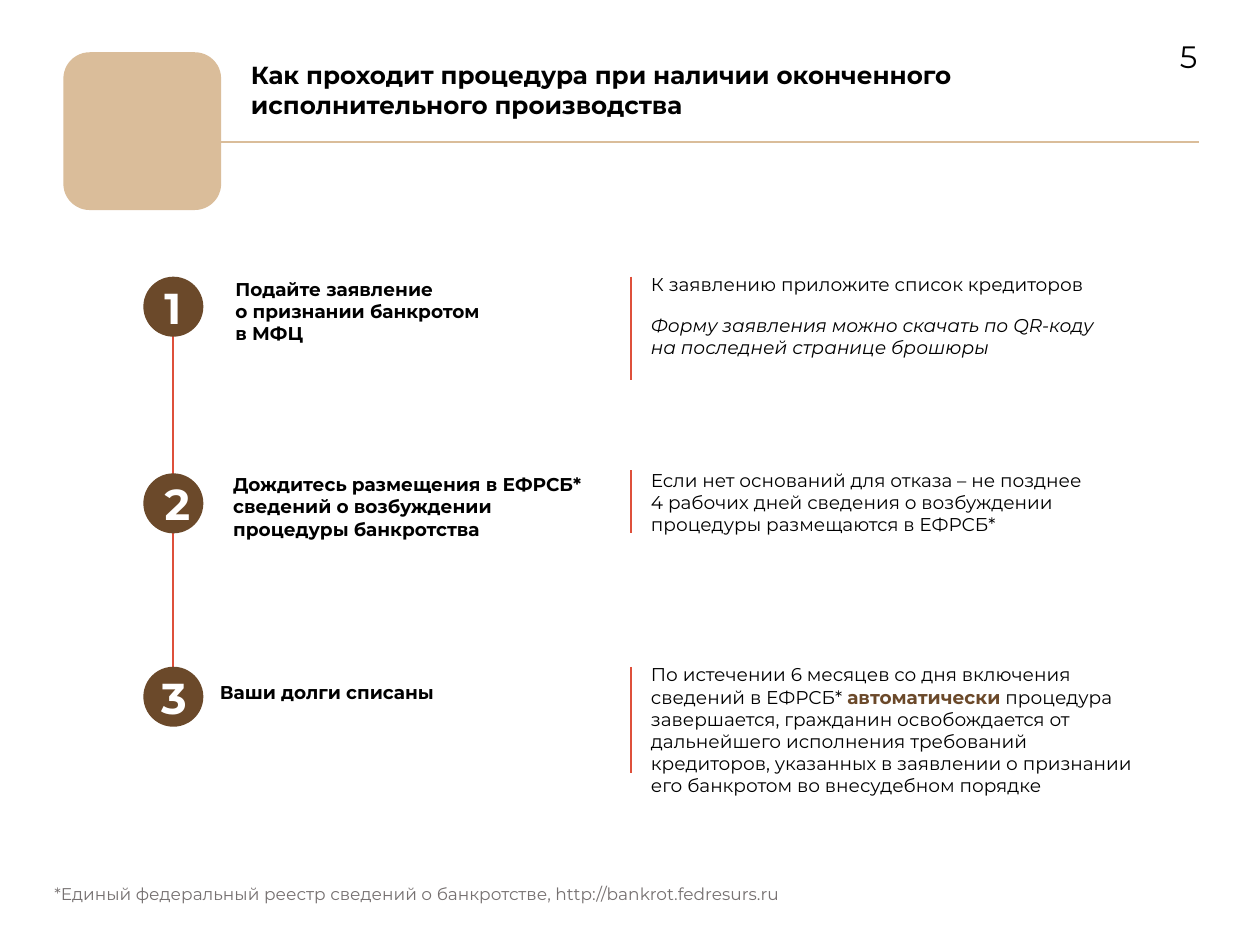
from lxml.etree import SubElement
from pptx import Presentation
from pptx.dml.color import RGBColor
from pptx.enum.shapes import MSO_CONNECTOR, MSO_SHAPE
from pptx.enum.text import MSO_ANCHOR, PP_ALIGN
from pptx.oxml.ns import qn
from pptx.util import Emu, Mm, Pt

SCALE = 9144
TAN, BROWN, RED, GRAY = "DABD9A", "6B492A", "DE503B", "767171"
BLACK, WHITE = "000000", "FFFFFF"

STEPS = [
    dict(top=249, digit="1", shift=4, head_at=(73, -4), head_w=279,
         head="Подайте заявление\nо признании банкротом \nв МФЦ",
         bar=(0, 93), note_at=-8, gap=6,
         note=[["К заявлению приложите список кредиторов"],
               [("Форму заявления можно скачать по QR-коду \n"
                 "на последней странице брошюры", dict(italic=True))]]),
    dict(top=426, digit="2", shift=8, head_at=(71, -5), head_w=348,
         head="Дождитесь размещения в ЕФРСБ* \n"
              "сведений о возбуждении процедуры банкротства",
         bar=(-3, 57), note_at=-9, gap=0,
         note=[["Если нет оснований для отказа – не позднее \n"
                "4 рабочих дней сведения о возбуждении "
                "процедуры размещаются в ЕФРСБ*"]]),
    dict(top=600, digit="3", shift=5, head_at=(59, 8), head_w=381,
         head="Ваши долги списаны",
         bar=(0, 96), note_at=-8, gap=0,
         note=[["По истечении 6 месяцев со дня включения сведений в ЕФРСБ* ",
                ("автоматически", dict(bold=True, color=BROWN)),
                " процедура завершается, гражданин освобождается от "
                "дальнейшего исполнения требований кредиторов, указанных "
                "в заявлении о признании его банкротом "
                "во внесудебном порядке"]]),
]


def px(*sizes):
    return [Emu(size * SCALE) for size in sizes]


def tint(code):
    return RGBColor.from_string(code)


def style(font, size, color, bold=False, italic=False):
    font.name, font.size = "Montserrat", Pt(size)
    font.bold, font.italic = bold, italic
    font.color.rgb = tint(color)


def write(slide, box, text, size=12, color=BLACK, bold=False, align=PP_ALIGN.LEFT,
          anchor=MSO_ANCHOR.TOP, lead=None, gap=0, wrap=True):
    frame = slide.shapes.add_textbox(*px(*box)).text_frame
    frame.word_wrap = wrap
    frame.vertical_anchor = anchor
    paras = [[text]] if isinstance(text, str) else text
    for at, runs in enumerate(paras):
        para = frame.add_paragraph() if at else frame.paragraphs[0]
        para.alignment = align
        para.space_before = para.space_after = Pt(gap)
        if lead:
            para.line_spacing = lead
        for run in runs:
            words, extra = (run, {}) if isinstance(run, str) else run
            look = dict(size=size, color=color, bold=bold) | extra
            for row, line in enumerate(words.split("\n")):
                if row:
                    para.add_line_break()
                part = para.add_run()
                part.text = line
                style(part.font, **look)


def rule(slide, x1, y1, x2, y2, color):
    line = slide.shapes.add_connector(MSO_CONNECTOR.STRAIGHT, *px(x1, y1, x2, y2))
    line.line.color.rgb = tint(color)
    line.line.width = Pt(1.5)
    SubElement(line._element.spPr, qn("a:effectLst"))


def block(slide, kind, box, color):
    shape = slide.shapes.add_shape(kind, *px(*box))
    shape.shadow.inherit = False
    shape.fill.solid()
    shape.fill.fore_color.rgb = tint(color)
    shape.line.fill.background()
    return shape


def header(slide, x, y, w):
    side = 142
    rule(slide, x + side // 2, y + 81, x + w, y + 81, TAN)
    badge = block(slide, MSO_SHAPE.ROUNDED_RECTANGLE, (x, y, side, side), TAN)
    badge.adjustments[0] = 0.167
    write(slide, (x + 159, y + 2, 674, 63),
          "Как проходит процедура при наличии оконченного \n"
          "исполнительного производства", size=16, bold=True)
    write(slide, (x + w - 27, y - 18, 37, 43), "5", size=20, wrap=False)


def step(slide, x, y, data):
    block(slide, MSO_SHAPE.OVAL, (x, y, 54, 54), BROWN)
    write(slide, (x + data["shift"], y - 8, 45, 64), data["digit"], size=28,
          color=WHITE, bold=True, align=PP_ALIGN.CENTER,
          anchor=MSO_ANCHOR.BOTTOM, lead=0.9)
    dx, dy = data["head_at"]
    write(slide, (x + dx, y + dy, data["head_w"], 70), data["head"], bold=True)
    start, size = data["bar"]
    rule(slide, x + 439, y + start, x + 439, y + start + size, RED)
    write(slide, (x + 447, y + data["note_at"], 457, 86), data["note"],
          gap=data["gap"])


def steps(slide, x):
    first, last = STEPS[0]["top"], STEPS[-1]["top"]
    rule(slide, x + 27, first + 32, x + 27, last + 32, RED)
    for data in STEPS:
        step(slide, x, data["top"], data)


def footer(slide, x, y, w):
    write(slide, (x, y, w, 28),
          "*Единый федеральный реестр сведений о банкротстве, "
          "http://bankrot.fedresurs.ru", size=11, color=GRAY)


def main():
    deck = Presentation()
    deck.slide_width, deck.slide_height = Mm(288), Mm(216)
    slide = deck.slides.add_slide(deck.slide_layouts[6])
    header(slide, 57, 47, 1022)
    steps(slide, 129)
    footer(slide, 39, 790, 958)
    deck.save("out.pptx")


if __name__ == "__main__":
    main()
